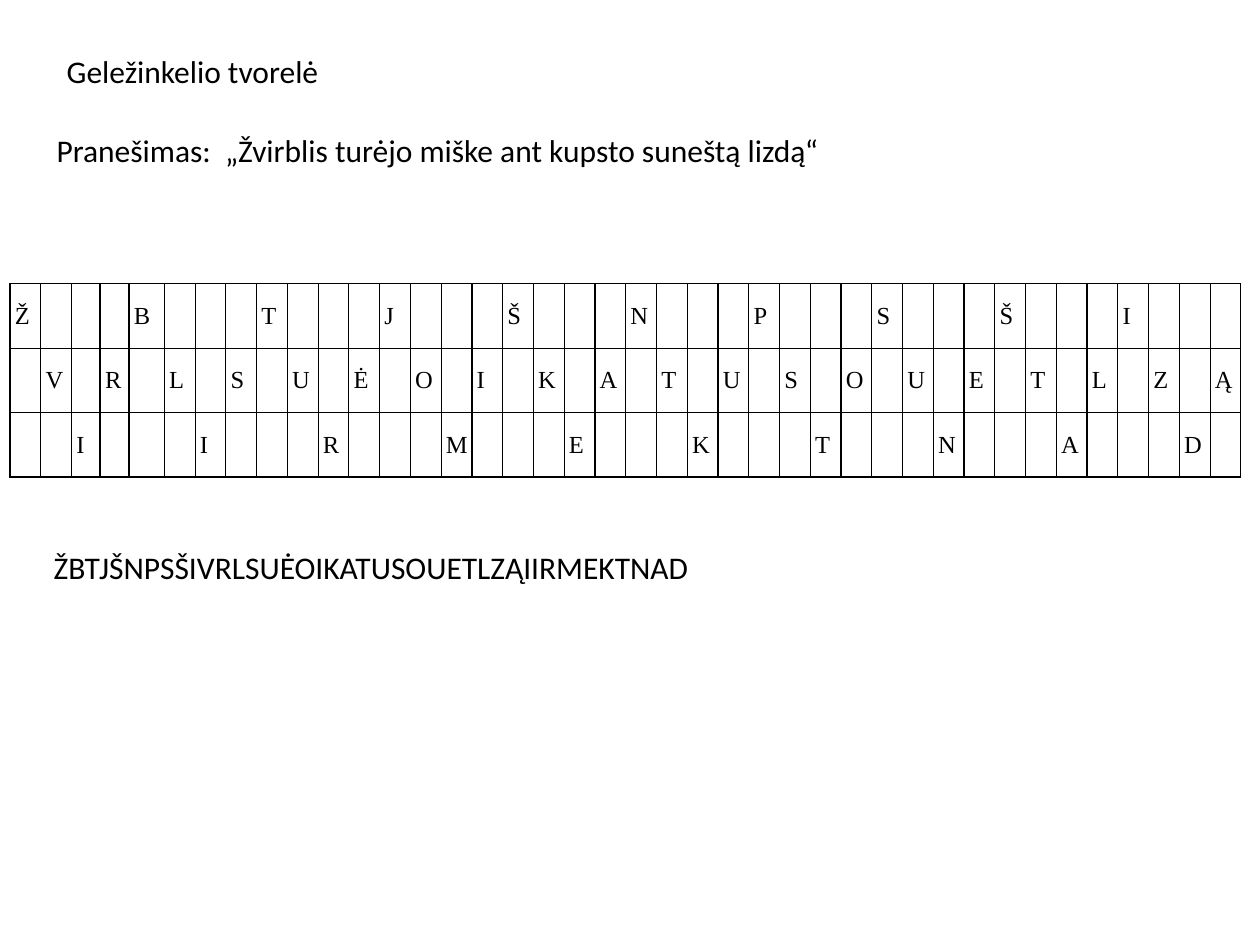
import pptx
import pptx.dml.color
import pptx.enum.text
import pptx.oxml
import pptx.oxml.ns
import pptx.util
import lxml.etree

Cm = pptx.util.Cm
Pt = pptx.util.Pt
INK = {"text": "000000", "line": "000000"}
RAILS = (0, 1, 2, 1)
LETTERS = "ŽVIRBLISTURĖJOMIŠKEANTKUPSTOSUNEŠTALIZDĄ"
WIDTHS = {2: 0.58, 3: 0.58, 4: 0.71}


def write(frame, text, font, size):
    """Put one run of text in the first paragraph of a frame."""
    line = frame.paragraphs[0]
    line.alignment = pptx.enum.text.PP_ALIGN.LEFT
    run = line.add_run()
    run.text = text
    run.font.name = font
    run.font.size = Pt(size)
    run.font.color.rgb = pptx.dml.color.RGBColor.from_string(INK["text"])


def label(shape, text, box):
    """Place a shape in its box and give it a line of body text."""
    shape.left, shape.top, shape.width, shape.height = map(Cm, box)
    frame = shape.text_frame
    frame.word_wrap = True
    frame.auto_size = pptx.enum.text.MSO_AUTO_SIZE.SHAPE_TO_FIT_TEXT
    frame.vertical_anchor = pptx.enum.text.MSO_ANCHOR.TOP
    write(frame, text, "Calibri", 18)


def edge(cell, side, width):
    """Draw one border of a cell, ahead of its fill."""
    props = cell._tc.get_or_add_tcPr()
    line = lxml.etree.SubElement(props, pptx.oxml.ns.qn("a:" + side), w=str(Pt(width)))
    fill = lxml.etree.SubElement(line, pptx.oxml.ns.qn("a:solidFill"))
    lxml.etree.SubElement(fill, pptx.oxml.ns.qn("a:srgbClr"), val=INK["line"])


def weight(col):
    """Give the width of the vertical rule at a column edge."""
    return 1 if col % 4 in (0, 3) and col != len(LETTERS) - 1 else 0.5


def fence(slide, box):
    """Set the letters in a zigzag over three rails."""
    rows = max(RAILS) + 1
    shape = slide.shapes.add_table(rows, len(LETTERS), *map(Cm, box))
    table = shape.table
    table.first_row = table.horz_banding = False
    for row in table.rows:
        row.height = Cm(box[3] / rows)
    for col, letter in enumerate(LETTERS):
        table.columns[col].width = Cm(WIDTHS.get(col, 0.62))
        for row in range(rows):
            cell = table.cell(row, col)
            cell.margin_left = cell.margin_right = Cm(0.1)
            cell.vertical_anchor = pptx.enum.text.MSO_ANCHOR.MIDDLE
            edge(cell, "lnL", weight(col))
            edge(cell, "lnR", weight(col + 1))
            edge(cell, "lnT", 1 if row == 0 else 0.5)
            edge(cell, "lnB", 1 if row == rows - 1 else 0.5)
            cell.fill.background()
            if RAILS[col % len(RAILS)] == row:
                write(cell.text_frame, letter, "Times New Roman", 14)


def cipher():
    """Read the letters rail by rail."""
    return "".join(
        letter
        for rail in range(max(RAILS) + 1)
        for col, letter in enumerate(LETTERS)
        if RAILS[col % len(RAILS)] == rail
    )


def main():
    """Build the rail fence slide and save it."""
    deck = pptx.Presentation()
    deck.slide_width, deck.slide_height = Cm(25.4), Cm(19.05)
    slide = deck.slides.add_slide(deck.slide_layouts[5])
    label(slide.shapes.title, "Geležinkelio tvorelė", (1.09, 0.92, 22, 1.02))
    texts = (
        ("Pranešimas:  „Žvirblis turėjo miške ant kupsto suneštą lizdą“", (0.89, 2.52, 23.4, 1.02)),
        (cipher(), (0.83, 10.92, 23.4, 1.02)),
    )
    for text, box in texts:
        label(slide.shapes.add_textbox(0, 0, 0, 0), text, box)
    fence(slide, (0.2, 5.72, 24.8, 3.9))
    deck.save("out.pptx")


if __name__ == "__main__":
    main()
